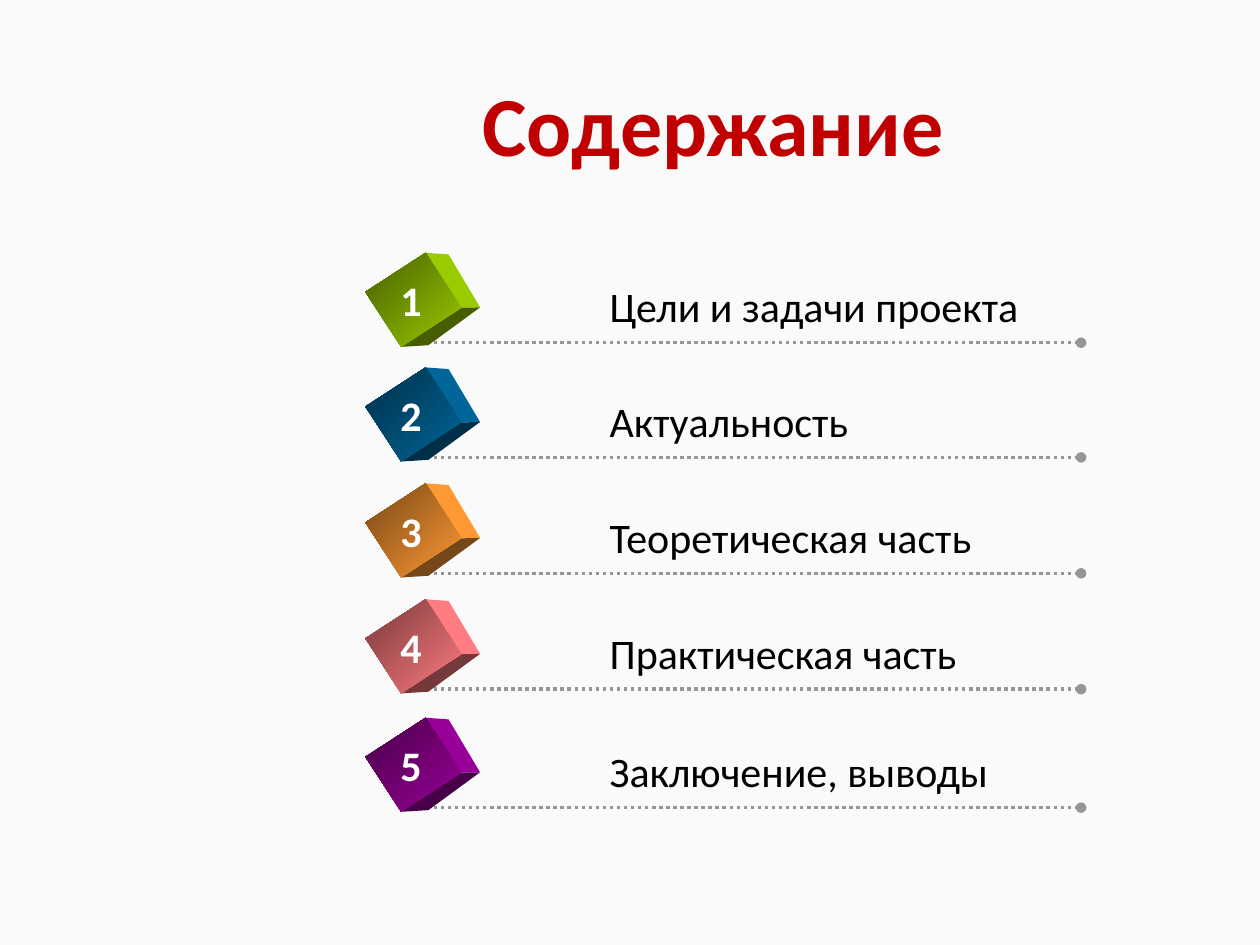
from dataclasses import dataclass
from math import cos, radians, sin

from lxml import etree
from pptx import Presentation
from pptx.dml.color import RGBColor
from pptx.enum import dml, shapes, text
from pptx.oxml import ns
from pptx.util import Inches, Pt


@dataclass(frozen=True)
class Theme:
    font: str = "Calibri"
    background: str = "FAFAFA"
    title: str = "C00000"
    label: str = "000000"
    number: str = "FFFFFF"
    rule: str = "969696"
    title_size: int = 48
    item_size: int = 24


theme = Theme()

# Label, bright colour, dark colour, height of the dotted rule
items = [
    ("Цели и задачи проекта", "99CC00", "475E00", 2.72),
    ("Актуальность", "006699", "002F47", 3.63),
    ("Теоретическая часть", "FF9933", "764718", 4.55),
    ("Практическая часть", "FF7C80", "76393B", 5.47),
    ("Заключение, выводы", "990099", "470047", 6.41),
]

# Cube geometry, measured from the centre of its front face
cube_x, cube_width, cube_height, cube_turn = 3.28, 0.52, 0.57, 57
turn = radians(cube_turn)
top, right, bottom = [
    (x * cos(turn) - y * sin(turn), x * sin(turn) + y * cos(turn))
    for x, y in [
        (-cube_width / 2, -cube_height / 2),
        (cube_width / 2, -cube_height / 2),
        (cube_width / 2, cube_height / 2),
    ]
]
back_top, back_right, back_bottom = (0.28, -0.36), (0.53, 0.06), (0.12, 0.36)


def add_text(parent, box, words, size, color, bold=False, wrap=False):
    frame = parent.add_textbox(*map(Inches, box)).text_frame
    frame.word_wrap = wrap
    paragraph = frame.paragraphs[0]
    paragraph.text = words
    paragraph.font.name = theme.font
    paragraph.font.size = Pt(size)
    paragraph.font.bold = bold
    paragraph.font.color.rgb = RGBColor.from_string(color)
    return frame


def add_face(parent, corners, center_y, color):
    points = [(Inches(cube_x + x), Inches(center_y + y)) for x, y in corners]
    outline = parent.build_freeform(*points[0])
    outline.add_line_segments(points[1:], close=True)
    face = outline.convert_to_shape()
    face.shadow.inherit = False
    face.fill.solid()
    face.fill.fore_color.rgb = RGBColor.from_string(color)
    face.line.fill.background()


presentation = Presentation()
presentation.slide_width, presentation.slide_height = Inches(10), Inches(7.5)
slide = presentation.slides.add_slide(presentation.slide_layouts[6])
slide.background.fill.solid()
slide.background.fill.fore_color.rgb = RGBColor.from_string(theme.background)

# Title
title = add_text(slide.shapes, (1.35, 0.59, 8.62, 0.87), "Содержание",
                 theme.title_size, theme.title, bold=True, wrap=True)
title.vertical_anchor = text.MSO_ANCHOR.MIDDLE
title.paragraphs[0].alignment = text.PP_ALIGN.CENTER
title.paragraphs[0].line_spacing = 0.9

# Contents
for number, (label, bright, dark, rule_y) in enumerate(items, 1):
    entry = slide.shapes.add_group_shape().shapes
    center_y = rule_y - 0.34

    # Dotted rule ending in a dot
    rule = entry.add_connector(shapes.MSO_CONNECTOR.STRAIGHT, Inches(3.33),
                               Inches(rule_y), Inches(8.58), Inches(rule_y))
    rule.line.color.rgb = RGBColor.from_string(theme.rule)
    rule.line.width = Pt(2)
    rule.line.dash_style = dml.MSO_LINE.ROUND_DOT
    etree.SubElement(rule.line._get_or_add_ln(), ns.qn("a:tailEnd"), type="oval")
    etree.SubElement(rule._element.spPr, ns.qn("a:effectLst"))

    # Cube: side, underside and shaded front
    add_face(entry, [top, back_top, back_right, right], center_y, bright)
    add_face(entry, [bottom, right, back_right, back_bottom], center_y, dark)
    front = entry.add_shape(
        shapes.MSO_SHAPE.RECTANGLE, Inches(cube_x - cube_width / 2),
        Inches(center_y - cube_height / 2), Inches(cube_width), Inches(cube_height))
    front.rotation = cube_turn
    front.shadow.inherit = False
    front.line.fill.background()
    front.fill.gradient()
    front.fill.gradient_angle = 192
    for stop, color, position in zip(front.fill.gradient_stops, (bright, dark), (0, 1)):
        stop.color.rgb = RGBColor.from_string(color)
        stop.position = position

    # Label and number
    add_text(entry, (4.74, rule_y - 0.54, 3.48, 0.51), label,
             theme.item_size, theme.label)
    add_text(entry, (3.08, rule_y - 0.59, 0.39, 0.5), str(number),
             theme.item_size, theme.number, bold=True)

presentation.save("out.pptx")
